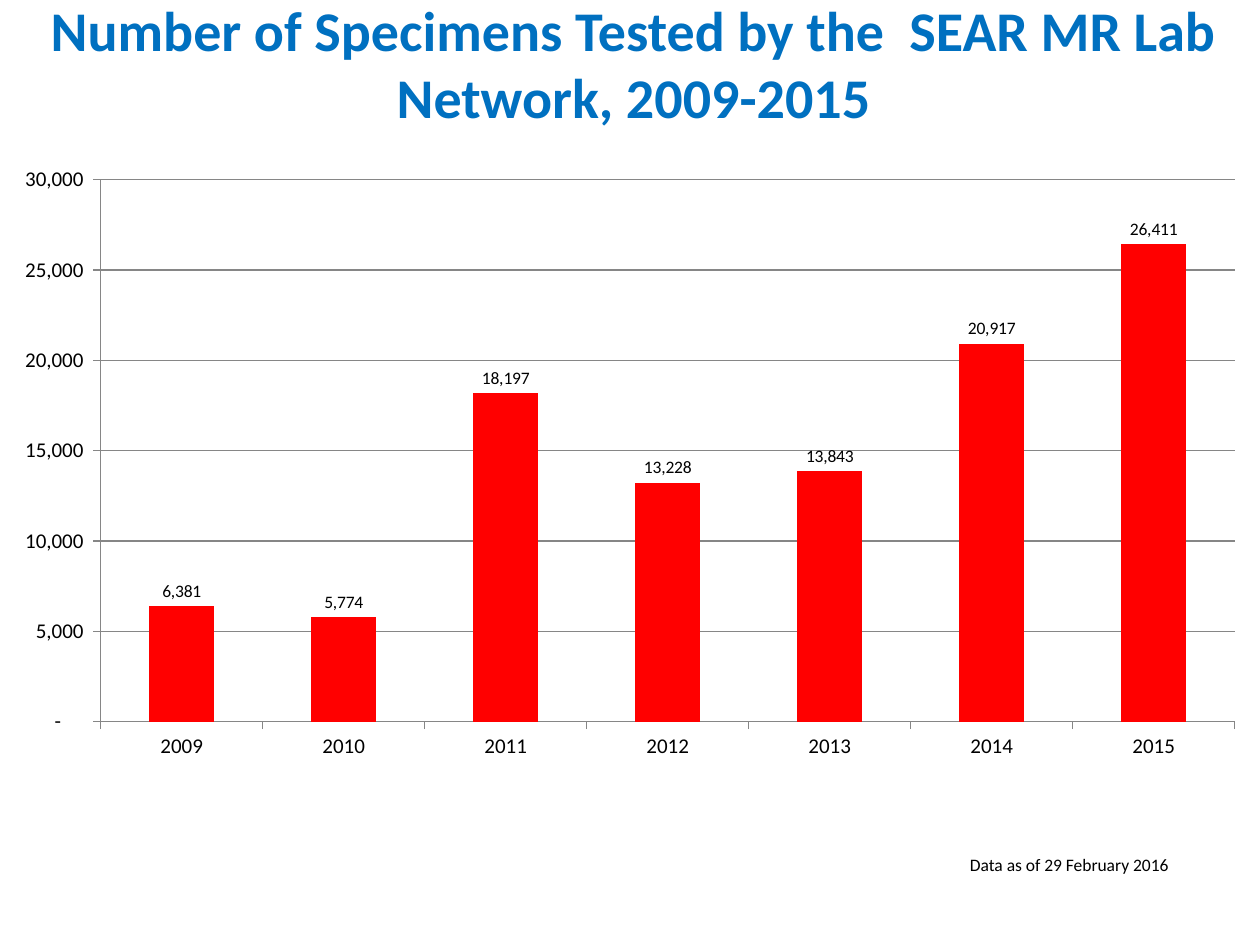
from pptx import Presentation
from pptx.chart.data import CategoryChartData
from pptx.dml.color import RGBColor
from pptx.enum.chart import XL_CHART_TYPE as ChartType, XL_LABEL_POSITION as LabelPos
from pptx.enum.chart import XL_TICK_MARK as TickMark
from pptx.enum.text import MSO_ANCHOR as Anchor, PP_ALIGN as Align
from pptx.oxml import parse_xml
from pptx.oxml.ns import nsdecls
from pptx.util import Inches, Pt

FONT = "Calibri"
BLUE = RGBColor(0x00, 0x70, 0xC0)
RED = RGBColor(0xFF, 0x00, 0x00)
BLACK = RGBColor(0x00, 0x00, 0x00)
GRAY = RGBColor(0x86, 0x86, 0x86)

AXIS_FORMAT = '_-* #,##0_-;\\-* #,##0_-;_-* "-"??_-;_-@_'
SPECIMENS = {
    "2009": 6381, "2010": 5774, "2011": 18197, "2012": 13228,
    "2013": 13843, "2014": 20917, "2015": 26411,
}
# Inner plot area as fractions of the chart box
PLOT_AREA = {"x": 0.08, "y": 0.04, "w": 0.9, "h": 0.88}


def add_text(slide, box, text, size=10, color=BLACK, bold=False,
             align=Align.LEFT, anchor=Anchor.TOP, wrap=True):
    s = slide.shapes.add_textbox(*map(Inches, box))
    tf = s.text_frame
    tf.word_wrap = wrap
    tf.vertical_anchor = anchor
    p = tf.paragraphs[0]
    p.alignment = align
    r = p.add_run()
    r.text = text
    set_font(r.font, size, color, bold)
    return s


def set_font(font, size, color=BLACK, bold=False):
    font.name = FONT
    font.size = Pt(size)
    font.bold = bold
    font.color.rgb = color


def set_line(line):
    line.color.rgb = GRAY
    line.width = Pt(0.75)


def set_plot_layout(chart):
    modes = "".join(f'<c:{k}Mode val="edge"/>' for k in "xy")
    sizes = "".join(f'<c:{k} val="{v}"/>' for k, v in PLOT_AREA.items())
    layout = parse_xml(
        f'<c:layout {nsdecls("c")}><c:manualLayout><c:layoutTarget val="inner"/>'
        f'{modes}{sizes}</c:manualLayout></c:layout>')
    plot_area = chart.element.chart.plotArea
    for old in plot_area.findall(layout.tag):
        plot_area.remove(old)
    plot_area.insert(0, layout)


def add_specimen_chart(slide, box):
    data = CategoryChartData(number_format="#,##0")
    data.categories = list(SPECIMENS)
    data.add_series("Series 1", list(SPECIMENS.values()))
    chart = slide.shapes.add_chart(
        ChartType.COLUMN_CLUSTERED, *map(Inches, box), data).chart
    chart.has_title = False
    chart.has_legend = False
    set_font(chart.font, 10)
    set_plot_layout(chart)

    # Columns and their value labels
    plot = chart.plots[0]
    plot.gap_width = 150
    plot.vary_by_categories = False
    series = plot.series[0]
    series.format.fill.solid()
    series.format.fill.fore_color.rgb = RED
    labels = series.data_labels
    labels.show_value = True
    labels.position = LabelPos.OUTSIDE_END
    labels.number_format = "#,##0"
    labels.number_format_is_linked = False
    set_font(labels.font, 10)

    # Axes and gridlines
    for axis in (chart.category_axis, chart.value_axis):
        axis.major_tick_mark = TickMark.OUTSIDE
        axis.minor_tick_mark = TickMark.NONE
        set_font(axis.tick_labels.font, 12)
        set_line(axis.format.line)
    values = chart.value_axis
    values.minimum_scale, values.maximum_scale = 0, 30000
    values.major_unit = 5000
    values.tick_labels.number_format = AXIS_FORMAT
    values.tick_labels.number_format_is_linked = False
    values.has_major_gridlines = True
    set_line(values.major_gridlines.format.line)


def build_slide(prs):
    slide = prs.slides.add_slide(prs.slide_layouts[6])
    add_specimen_chart(slide, (0, 1.23, 10, 4.89))
    # Title
    add_text(slide, (0.03, 0, 10, 0.99),
             "Number of Specimens Tested by the  SEAR MR Lab Network, 2009-2015",
             size=32, color=BLUE, bold=True, align=Align.CENTER, anchor=Anchor.MIDDLE)
    # Date note
    add_text(slide, (7.6, 6.73, 1.97, 0.27), "Data as of 29 February 2016", wrap=False)


def main():
    prs = Presentation()
    prs.slide_width, prs.slide_height = Inches(10), Inches(7.5)
    build_slide(prs)
    prs.save("out.pptx")


if __name__ == "__main__":
    main()
